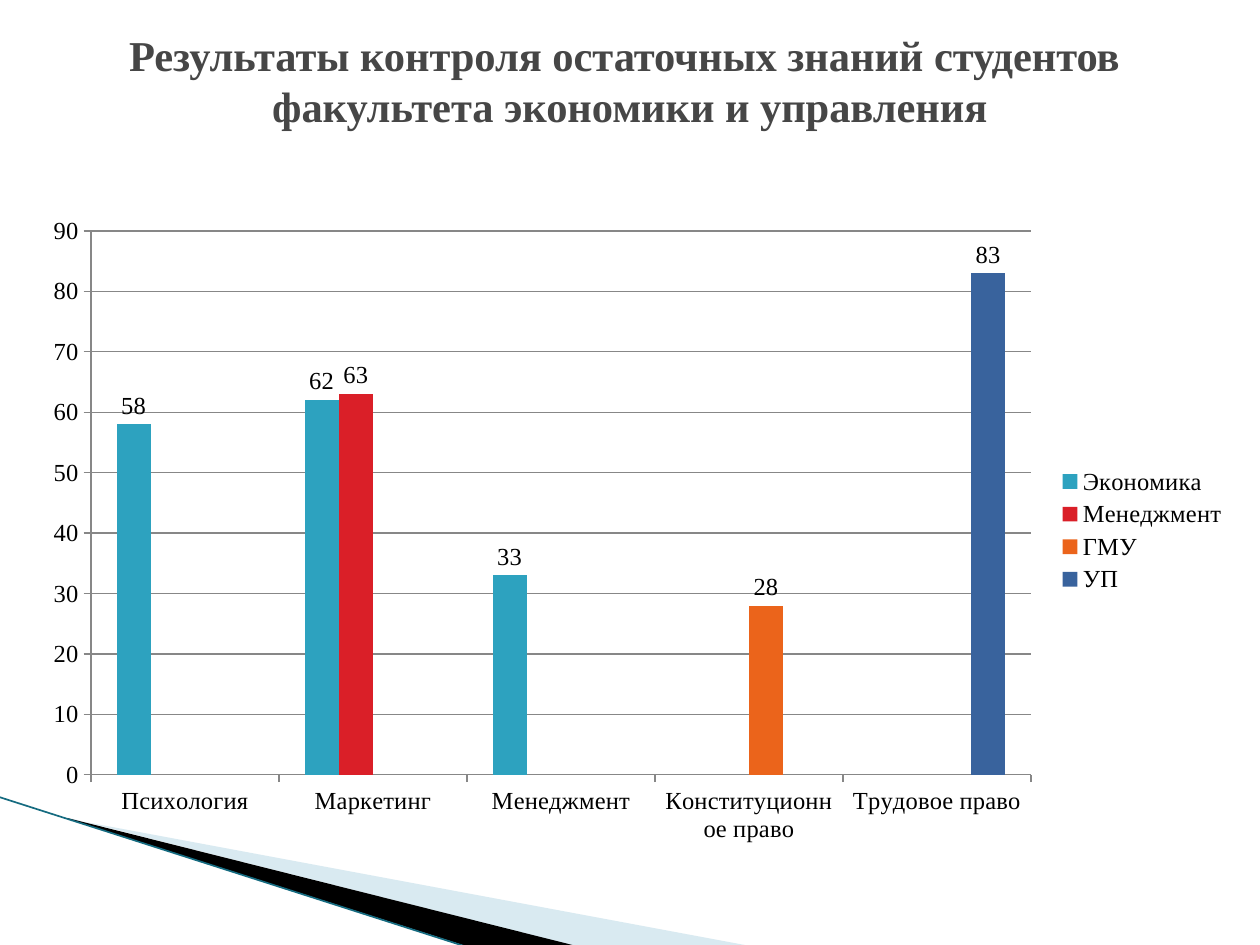
from lxml.etree import SubElement
from pptx import Presentation
from pptx.chart.data import CategoryChartData
from pptx.dml.color import RGBColor
from pptx.enum.chart import XL_CHART_TYPE, XL_LABEL_POSITION, XL_LEGEND_POSITION, XL_TICK_MARK
from pptx.enum.shapes import MSO_CONNECTOR
from pptx.enum.text import MSO_ANCHOR, PP_ALIGN
from pptx.oxml import parse_xml
from pptx.oxml.ns import nsdecls, qn
from pptx.util import Pt

TITLE = ["Результаты контроля остаточных знаний студентов ",
         "факультета экономики и управления"]
SUBJECTS = ["Психология", "Маркетинг", "Менеджмент",
            "Конституционное право", "Трудовое право"]
SCORES = [
    ("Экономика", "2DA2BF", [58, 62, 33, None, None]),
    ("Менеджмент", "DA1F28", [None, 63, None, None, None]),
    ("ГМУ", "EB641B", [None, None, None, 28, None]),
    ("УП", "39639D", [None, None, None, None, 83]),
]
# Corner wedges: colour, opacity in percent, points in px
WEDGES = [
    ("A0CBDC", 40, [(69, 819), (750, 946), (575, 946), (69, 818)]),
    ("000000", 100, [(67, 818), (576, 946), (469, 947), (68, 819)]),
]
EDGE = [(-1, 797), (467, 947)]
CHART = (29, 204, 1211, 653)
PLOT = (91, 231, 940, 544)
TITLE_BOX = (63, 25, 1134, 110)
THEME = {"font": "Times New Roman", "title": 24.3, "label": 14,
         "title_ink": "464646", "ink": "000000", "grid": "878787", "edge": "156B80"}
PX = 914400 // 126


def emu(nums):
    return [round(n * PX) for n in nums]


def color(name):
    return RGBColor.from_string(THEME.get(name, name))


def style(font, size, ink, bold=False):
    font.name, font.size, font.bold = THEME["font"], Pt(THEME[size]), bold
    font.color.rgb = color(ink)


def add_wedge(slide, fill, alpha, points):
    pen = slide.shapes.build_freeform(*points[0], scale=PX)
    pen.add_line_segments(points[1:], close=True)
    shape = pen.convert_to_shape()
    shape.shadow.inherit = False
    shape.line.fill.background()
    shape.fill.solid()
    shape.fill.fore_color.rgb = color(fill)
    if alpha < 100:
        tint = shape.fill._xPr.find(".//" + qn("a:srgbClr"))
        SubElement(tint, qn("a:alpha"), val=str(alpha * 1000))


def add_edge(slide):
    start, end = EDGE
    line = slide.shapes.add_connector(MSO_CONNECTOR.STRAIGHT, *emu(start + end))
    line.line.color.rgb = color("edge")
    line.line.width = Pt(0.95)
    SubElement(line._element.spPr, qn("a:effectLst"))


def place_plot(chart):
    """Fix the inner plot area as fractions of the chart frame."""
    left, top, wide, high = CHART
    x, y, w, h = PLOT
    parts = {"x": (x - left) / wide, "y": (y - top) / high, "w": w / wide, "h": h / high}
    tags = "".join(f'<c:{key}Mode val="edge"/>' for key in "xy")
    tags += "".join(f'<c:{key} val="{val:.4f}"/>' for key, val in parts.items())
    area = chart._chartSpace.chart.plotArea
    for old in area.findall(qn("c:layout")):
        area.remove(old)
    area.insert(0, parse_xml(
        f'<c:layout {nsdecls("c")}><c:manualLayout><c:layoutTarget val="inner"/>'
        f'{tags}</c:manualLayout></c:layout>'))


def add_scores(slide):
    data = CategoryChartData()
    data.categories = SUBJECTS
    for name, _, vals in SCORES:
        data.add_series(name, vals)
    chart = slide.shapes.add_chart(
        XL_CHART_TYPE.COLUMN_CLUSTERED, *emu(CHART), data).chart
    style(chart.font, "label", "ink")
    chart.has_title = False
    chart.has_legend = True
    chart.legend.position = XL_LEGEND_POSITION.RIGHT
    chart.legend.include_in_layout = False
    style(chart.legend.font, "label", "ink")
    plot = chart.plots[0]
    plot.vary_by_categories = False
    plot.gap_width, plot.overlap = 150, 0
    for series, (_, fill, _) in zip(plot.series, SCORES):
        series.format.fill.solid()
        series.format.fill.fore_color.rgb = color(fill)
        labels = series.data_labels
        labels.show_value = True
        labels.position = XL_LABEL_POSITION.OUTSIDE_END
        style(labels.font, "label", "ink")
    scale = chart.value_axis
    scale.minimum_scale, scale.maximum_scale, scale.major_unit = 0, 90, 10
    scale.has_major_gridlines = True
    for axis in (chart.category_axis, scale):
        axis.major_tick_mark = XL_TICK_MARK.OUTSIDE
        style(axis.tick_labels.font, "label", "ink")
        body = axis._element.find(qn("c:txPr")).find(qn("a:bodyPr"))
        body.set("rot", "0")
        body.set("vert", "horz")
    for part in (chart.category_axis, scale, scale.major_gridlines):
        part.format.line.color.rgb = color("grid")
        part.format.line.width = Pt(0.75)
    place_plot(chart)


def add_title(slide):
    frame = slide.shapes.add_textbox(*emu(TITLE_BOX)).text_frame
    frame.word_wrap = True
    frame.vertical_anchor = MSO_ANCHOR.MIDDLE
    frame.text = "\n".join(TITLE)
    for para in frame.paragraphs:
        para.alignment = PP_ALIGN.CENTER
        for run in para.runs:
            style(run.font, "title", "title_ink", True)


def main():
    deck = Presentation()
    deck.slide_width, deck.slide_height = emu((1260, 945))
    slide = deck.slides.add_slide(deck.slide_layouts[6])
    for wedge in WEDGES:
        add_wedge(slide, *wedge)
    add_edge(slide)
    add_scores(slide)
    add_title(slide)
    deck.save("out.pptx")


if __name__ == "__main__":
    main()
